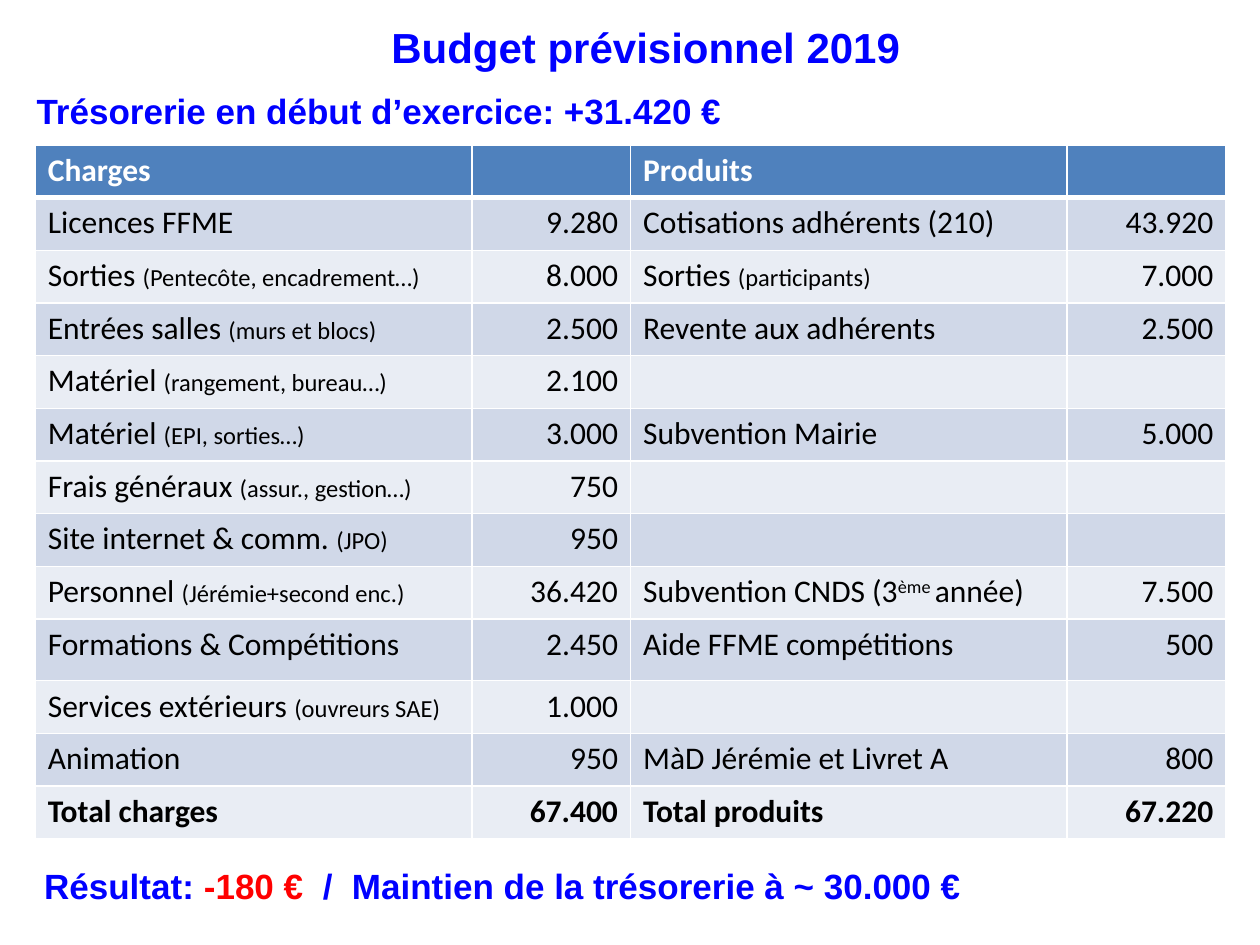
from dataclasses import dataclass

import pptx
import pptx.dml.color
import pptx.enum.text
import pptx.oxml
import pptx.oxml.ns
import pptx.util

RGB = pptx.dml.color.RGBColor.from_string
ALIGN = pptx.enum.text.PP_ALIGN
Inches = pptx.util.Inches
Pt = pptx.util.Pt


@dataclass(frozen=True)
class Theme:
    heading_font: str = "Arial"
    table_font: str = "Calibri"
    blue: str = "0000FF"
    red: str = "FF0000"
    black: str = "000000"
    white: str = "FFFFFF"
    header: str = "4F81BD"
    bands: tuple = ("E9EDF4", "D0D8E8")
    title: int = 24
    heading: int = 20
    body: int = 18
    detail: int = 14


THEME = Theme()
TABLE_BOX = (0.28, 1.15, 9.45, 5.51)
COLUMN_SHARES = (11, 4, 11, 4)
TALL_ROW, TALL_HEIGHT = 9, 0.49

ROWS = [
    ("Charges", "", "Produits", ""),
    ("Licences FFME", "9.280", "Cotisations adhérents (210)", "43.920"),
    (("Sorties ", "(Pentecôte, encadrement…)"), "8.000",
     ("Sorties ", "(participants)"), "7.000"),
    (("Entrées salles ", "(murs et blocs)"), "2.500", "Revente aux adhérents", "2.500"),
    (("Matériel ", "(rangement, bureau…)"), "2.100", "", ""),
    (("Matériel ", "(EPI, sorties…)"), "3.000", "Subvention Mairie", "5.000"),
    (("Frais généraux ", "(assur., gestion…)"), "750", "", ""),
    (("Site internet & comm. ", "(JPO)"), "950", "", ""),
    (("Personnel ", "(Jérémie+second enc.)"), "36.420",
     ("Subvention CNDS (3", "^ème ", "année)"), "7.500"),
    ("Formations & Compétitions", "2.450", "Aide FFME compétitions", "500"),
    (("Services extérieurs ", "(ouvreurs SAE)"), "1.000", "", ""),
    ("Animation", "950", "MàD Jérémie et Livret A", "800"),
    ("Total charges", "67.400", "Total produits", "67.220"),
]


def format_font(font, name, size, color, bold):
    font.name = name
    font.size = Pt(size)
    font.bold = bold
    font.color.rgb = RGB(color)


def place(s, left, top, width, height):
    s.left, s.top, s.width, s.height = map(Inches, (left, top, width, height))


def fill_heading(s, box, runs, size, align):
    place(s, *box)
    tf = s.text_frame
    tf.word_wrap = True
    tf.auto_size = pptx.enum.text.MSO_AUTO_SIZE.NONE
    tf.vertical_anchor = pptx.enum.text.MSO_ANCHOR.TOP
    tf.margin_left = tf.margin_right = tf.margin_bottom = 0
    tf.margin_top = Inches(0.04)
    p = tf.paragraphs[0]
    p.alignment = align
    format_font(p.font, THEME.heading_font, size, THEME.blue, True)
    for text, color in runs:
        r = p.add_run()
        r.text = text
        r.font.color.rgb = RGB(color)


def add_heading(slide, box, runs):
    s = slide.shapes.add_textbox(0, 0, 0, 0)
    fill_heading(s, box, runs, THEME.heading, ALIGN.LEFT)


def set_borders(cell, top, bottom):
    tc_pr = cell._tc.get_or_add_tcPr()
    sides = (("lnL", 1), ("lnR", 1), ("lnT", top), ("lnB", bottom))
    for i, (side, width) in enumerate(sides):
        tc_pr.insert(i, pptx.oxml.parse_xml(
            f'<a:{side} {pptx.oxml.ns.nsdecls("a")} w="{Pt(width)}"><a:solidFill>'
            f'<a:srgbClr val="{THEME.white}"/></a:solidFill></a:{side}>'))


def fill_cell(cell, content, row, column):
    header = row == 0
    cell.fill.solid()
    cell.fill.fore_color.rgb = RGB(THEME.header if header else THEME.bands[row % 2])
    set_borders(cell, 3 if row == 1 else 1, 3 if header else 1)
    p = cell.text_frame.paragraphs[0]
    p.alignment = ALIGN.RIGHT if column % 2 else ALIGN.LEFT
    format_font(p.font, THEME.table_font, THEME.body,
                THEME.white if header else THEME.black,
                header or row == len(ROWS) - 1)
    parts = (content,) if isinstance(content, str) else content
    for text in filter(None, parts):
        r = p.add_run()
        r.text = text.lstrip("^")
        if text.startswith("("):
            r.font.size = Pt(THEME.detail)
        if text.startswith("^"):
            r.font._element.set("baseline", "30000")


def add_budget_table(slide):
    left, top, width, height = TABLE_BOX
    table = slide.shapes.add_table(
        len(ROWS), len(COLUMN_SHARES), *map(Inches, TABLE_BOX)).table
    for column, share in zip(table.columns, COLUMN_SHARES):
        column.width = Inches(width * share / sum(COLUMN_SHARES))
    row_height = (height - TALL_HEIGHT) / (len(ROWS) - 1)
    for i, values in enumerate(ROWS):
        table.rows[i].height = Inches(TALL_HEIGHT if i == TALL_ROW else row_height)
        for j, content in enumerate(values):
            fill_cell(table.cell(i, j), content, i, j)


def main():
    prs = pptx.Presentation()
    prs.slide_width, prs.slide_height = Inches(10), Inches(7.5)
    slide = prs.slides.add_slide(prs.slide_layouts.get_by_name("Title Only"))
    fill_heading(slide.shapes.title, (2.87, 0.13, 4.51, 0.46),
                 [("Budget prévisionnel 2019", THEME.blue)], THEME.title, ALIGN.CENTER)
    add_budget_table(slide)
    add_heading(slide, (0.29, 0.67, 6.83, 0.46),
                [("Trésorerie en début d’exercice: +31.420 €", THEME.blue)])
    add_heading(slide, (0.35, 6.82, 9.59, 0.46),
                [("Résultat: ", THEME.blue), ("-180 €  ", THEME.red),
                 ("/  Maintien de la trésorerie à ~ 30.000 €", THEME.blue)])
    prs.save("out.pptx")


if __name__ == "__main__":
    main()
